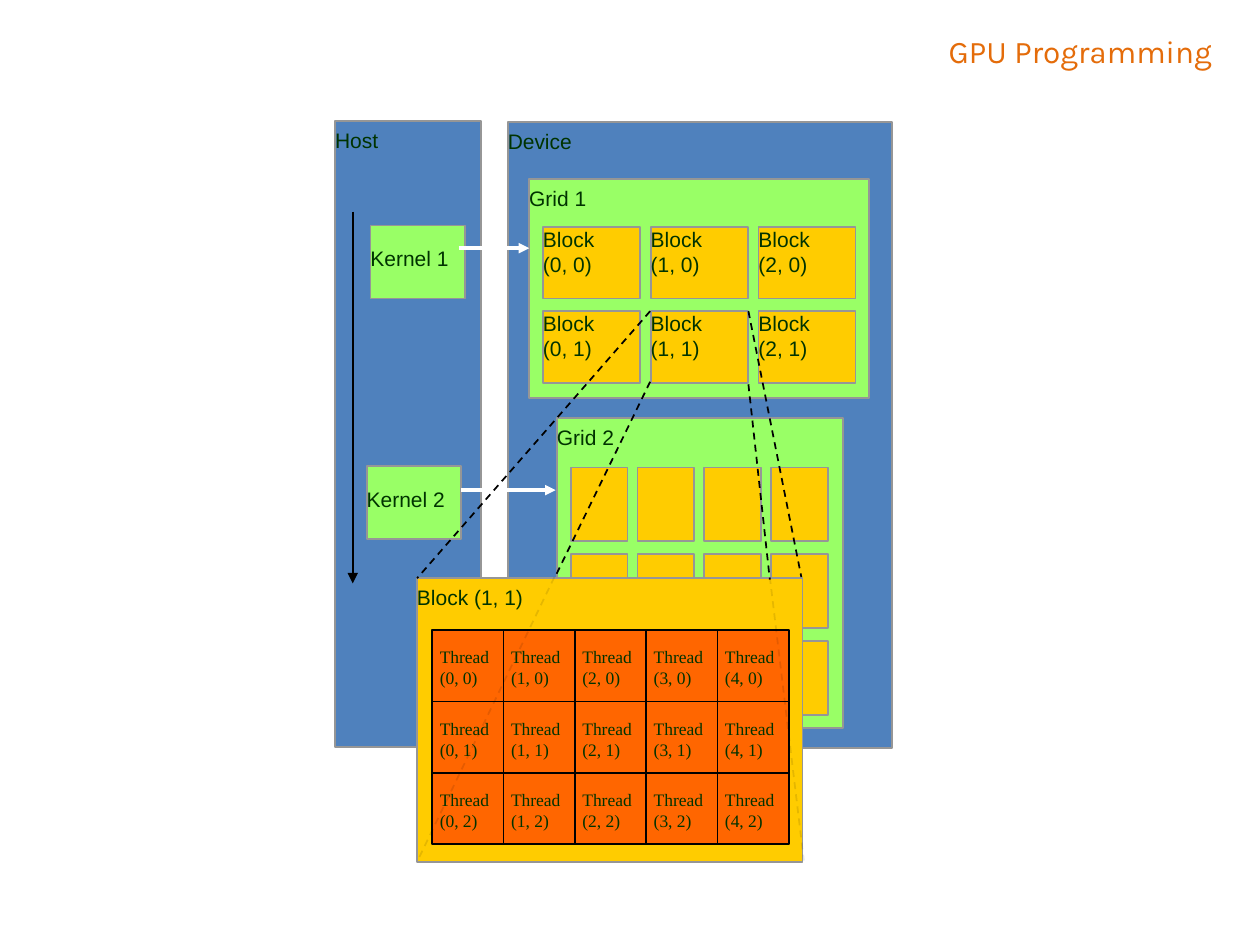
from itertools import product

from lxml.etree import SubElement
from pptx import Presentation
from pptx.dml.color import RGBColor
from pptx.enum.dml import MSO_LINE
from pptx.enum.shapes import MSO_CONNECTOR, MSO_SHAPE
from pptx.enum.text import MSO_ANCHOR, MSO_AUTO_SIZE, PP_ALIGN
from pptx.oxml.ns import qn
from pptx.util import Inches, Pt

BLUE = RGBColor(0x4F, 0x81, 0xBD)
GREEN = RGBColor(0x99, 0xFF, 0x66)
YELLOW = RGBColor(0xFF, 0xCC, 0x00)
ORANGE = RGBColor(0xFF, 0x66, 0x00)
GREY = RGBColor(0x96, 0x96, 0x96)
BLACK = RGBColor(0x00, 0x00, 0x00)
WHITE = RGBColor(0xFF, 0xFF, 0xFF)
LABEL_COLOR = RGBColor(0x00, 0x33, 0x00)
TITLE_COLOR = RGBColor(0xE4, 0x6C, 0x0A)

TITLE = "GPU Programming"

# label, left, top, width, height, fill, label offset from the top
HOST_PANELS = [
    ("Host", 2.66, 0.96, 1.16, 4.97, BLUE, 0.01),
    ("Kernel 1", 2.94, 1.79, 0.75, 0.58, GREEN, 0.12),
    ("Kernel 2", 2.91, 3.7, 0.75, 0.58, GREEN, 0.12),
]
DEVICE_PANELS = [
    ("Device", 4.03, 0.97, 3.05, 4.97, BLUE, 0.01),
    ("Grid 1", 4.2, 1.42, 2.7, 1.74, GREEN, 0.01),
    ("Grid 2", 4.42, 3.32, 2.27, 2.46, GREEN, 0.01),
]
OPEN_BLOCK = ("Block (1, 1)", 3.31, 4.59, 3.06, 2.25, YELLOW, 0.01)

GRID1 = dict(left=4.31, top=1.8, step_x=0.855, step_y=0.67, width=0.77, height=0.57)
GRID2 = dict(left=4.53, top=3.71, step_x=0.53, step_y=0.69, width=0.45, height=0.585)
GRID2_BLOCKS = [*product(range(2), range(4)), (2, 3)]  # row, column

THREADS = dict(left=3.43, top=5, width=2.83, height=1.7)
THREAD_COLUMNS, THREAD_ROWS = 5, 3

TIME_ARROW = ((2.8, 1.68), (2.8, 4.63))
LAUNCHES = [((3.64, 1.97), (4.2, 1.97)), ((3.66, 3.89), (4.41, 3.89))]
ZOOM_LINES = [
    ((5.16, 2.47), (3.31, 4.59)),
    ((5.94, 2.47), (6.36, 4.58)),
    ((5.16, 3.03), (4.41, 4.57)),
    ((5.94, 3.05), (6.11, 4.6)),
]
FAINT_ZOOM_LINES = [((4.4, 4.58), (3.32, 6.82)), ((6.11, 4.58), (6.38, 6.83))]


def apply_format(target, values):
    for name, value in values.items():
        setattr(target, name, value)


def add_box(shapes, left, top, width, height, fill, outline=GREY):
    box = shapes.add_shape(MSO_SHAPE.RECTANGLE, *map(Inches, (left, top, width, height)))
    box.shadow.inherit = False
    box.fill.solid()
    box.fill.fore_color.rgb = fill
    box.line.color.rgb = outline
    box.line.width = Pt(1)


def add_label(shapes, lines, left, top, width, height, font="Arial", size=12, **frame_format):
    frame = shapes.add_textbox(*map(Inches, (left, top, width, height))).text_frame
    apply_format(frame, dict(
        margin_left=0, margin_right=0, margin_top=0, margin_bottom=0,
        vertical_anchor=MSO_ANCHOR.MIDDLE, word_wrap=True) | frame_format)
    frame.text = "\n".join(lines)
    for paragraph in frame.paragraphs:
        apply_format(paragraph.font, dict(name=font, size=Pt(size)))
        paragraph.font.color.rgb = LABEL_COLOR


def add_line(shapes, start, end, color=BLACK, width=1, arrow=False, dashed=False, opacity=None):
    """Draw a straight line; opacity is in percent."""
    connector = shapes.add_connector(MSO_CONNECTOR.STRAIGHT, *map(Inches, (*start, *end)))
    line = connector.line
    line.color.rgb = color
    line.width = Pt(width)
    if dashed:
        line.dash_style = MSO_LINE.DASH
    properties = connector._element.spPr
    outline = properties.find(qn("a:ln"))
    if arrow:
        SubElement(outline, qn("a:tailEnd"), type="triangle")
    if opacity is not None:
        SubElement(outline.find(".//" + qn("a:srgbClr")), qn("a:alpha"), val=str(opacity * 1000))
    SubElement(properties, qn("a:effectLst"))


def add_panel(shapes, label, left, top, width, height, fill, offset):
    add_box(shapes, left, top, width, height, fill)
    add_label(shapes, [label], left, top + offset, width, 0.28)


def add_block(shapes, grid, row, column, lines=()):
    left = grid["left"] + column * grid["step_x"]
    top = grid["top"] + row * grid["step_y"]
    add_box(shapes, left, top, grid["width"], grid["height"], YELLOW)
    if lines:
        add_label(shapes, lines, left, top, grid["width"], 0.39)


def add_threads(shapes):
    left, top, width, height = THREADS.values()
    cell_width, cell_height = width / THREAD_COLUMNS, height / THREAD_ROWS
    add_box(shapes, left, top, width, height, ORANGE, BLACK)
    for row in range(1, THREAD_ROWS):
        y = top + row * cell_height
        add_line(shapes, (left, y), (left + width, y))
    for column in range(1, THREAD_COLUMNS):
        x = left + column * cell_width
        add_line(shapes, (x, top), (x, top + height))
    for row, column in product(range(THREAD_ROWS), range(THREAD_COLUMNS)):
        add_label(shapes, ["Thread", f"({column}, {row})"],
                  left + column * cell_width + 0.06, top + row * cell_height + 0.14,
                  0.45, 0.31, "Times New Roman", 10,
                  word_wrap=False, auto_size=MSO_AUTO_SIZE.SHAPE_TO_FIT_TEXT)


def add_title(slide):
    title = slide.shapes.title
    apply_format(title, dict(left=Inches(5.22), top=Inches(0.2),
                             width=Inches(4.5), height=Inches(0.4)))
    frame = title.text_frame
    frame.text = TITLE
    apply_format(frame, dict(vertical_anchor=MSO_ANCHOR.TOP, word_wrap=True,
                             auto_size=MSO_AUTO_SIZE.SHAPE_TO_FIT_TEXT))
    paragraph = frame.paragraphs[0]
    paragraph.alignment = PP_ALIGN.RIGHT
    font = paragraph.runs[0].font
    apply_format(font, dict(name="Karla", size=Pt(18)))
    font.color.rgb = TITLE_COLOR


def main():
    deck = Presentation()
    deck.slide_width, deck.slide_height = Inches(10), Inches(7.5)
    slide = deck.slides.add_slide(deck.slide_layouts.get_by_name("Title Only"))
    shapes = slide.shapes
    add_title(slide)

    for panel in HOST_PANELS:
        add_panel(shapes, *panel)
    add_line(shapes, *TIME_ARROW, arrow=True)

    for panel in DEVICE_PANELS:
        add_panel(shapes, *panel)
    for row, column in product(range(2), range(3)):
        add_block(shapes, GRID1, row, column, ["Block", f"({column}, {row})"])
    for row, column in GRID2_BLOCKS:
        add_block(shapes, GRID2, row, column)

    add_panel(shapes, *OPEN_BLOCK)
    add_threads(shapes)

    for launch in LAUNCHES:
        add_line(shapes, *launch, color=WHITE, width=2, arrow=True)
    for zoom in ZOOM_LINES:
        add_line(shapes, *zoom, dashed=True)
    for zoom in FAINT_ZOOM_LINES:
        add_line(shapes, *zoom, dashed=True, opacity=10)

    deck.save("out.pptx")


if __name__ == "__main__":
    main()
